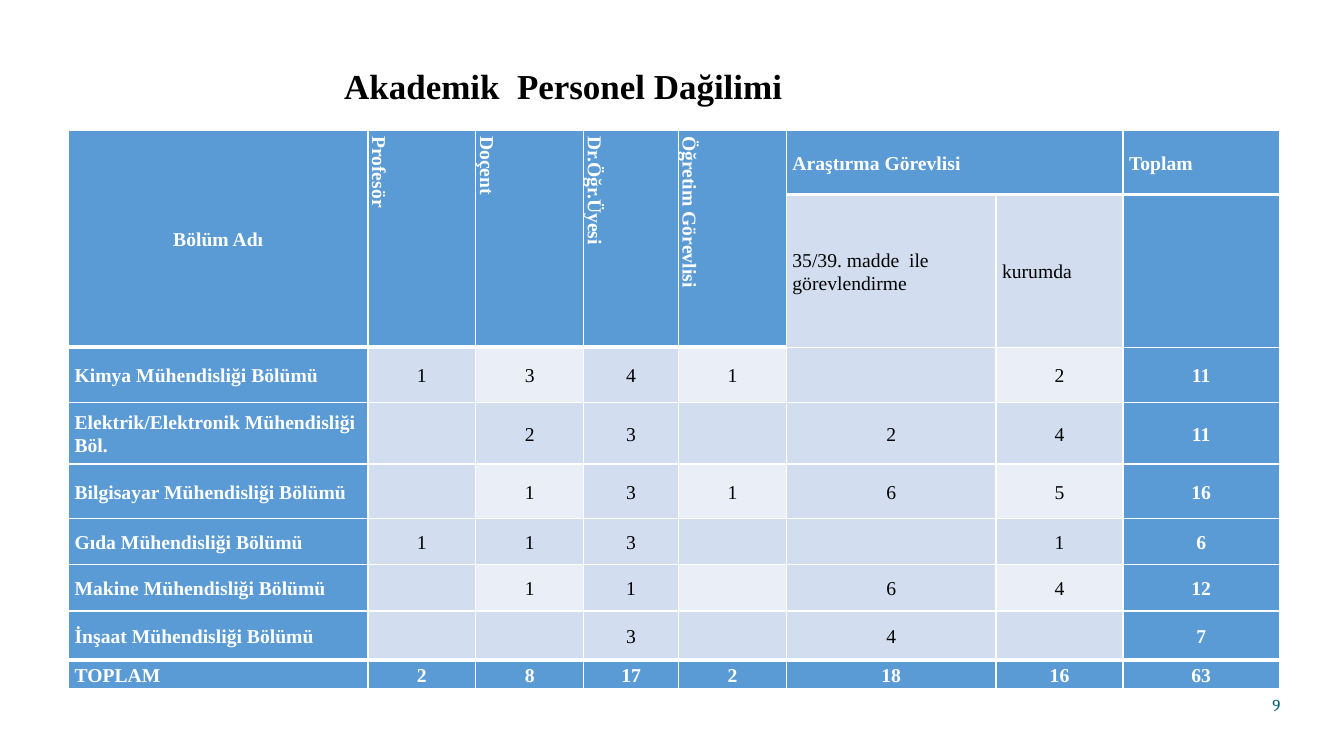
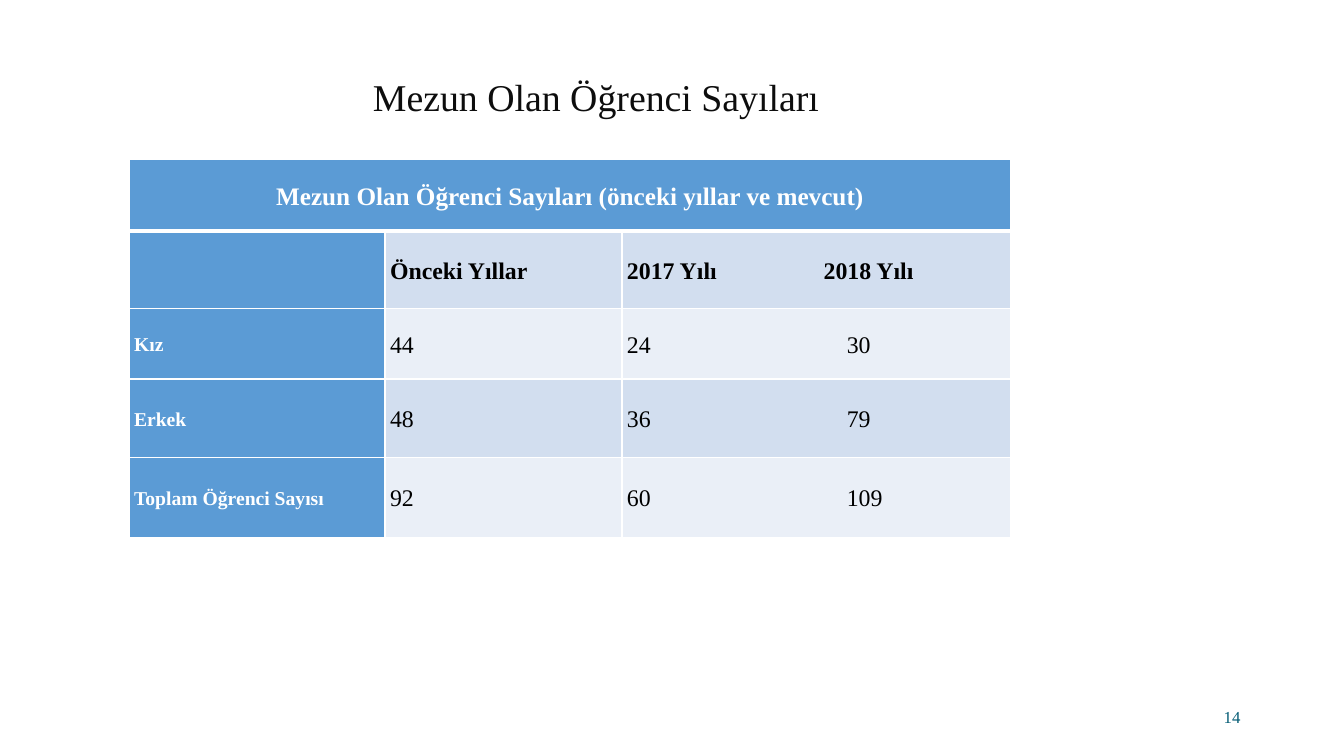
from pptx import Presentation
from pptx import util as u
from pptx.dml.color import RGBColor
from pptx.enum import text
from pptx.oxml import parse_xml
from pptx.oxml.ns import nsdecls

BLUE = RGBColor(0x5B, 0x9B, 0xD5)
BAND = RGBColor(0xD2, 0xDE, 0xEF)
PALE = RGBColor(0xEA, 0xEF, 0xF7)
WHITE = RGBColor(0xFF, 0xFF, 0xFF)
BLACK = RGBColor(0x00, 0x00, 0x00)
INK = RGBColor(0x0D, 0x0D, 0x0D)
TEAL = RGBColor(0x04, 0x5C, 0x75)
SERIF = "Times New Roman"
LEFT, CENTER, RIGHT = text.PP_ALIGN.LEFT, text.PP_ALIGN.CENTER, text.PP_ALIGN.RIGHT

deck = Presentation()
deck.slide_width, deck.slide_height = u.Inches(13.33), u.Inches(7.5)
# All lengths below are percentages of the slide's width and height
COL, ROW = deck.slide_width / 100, deck.slide_height / 100


def style(para, size, color, bold=False, align=LEFT, name=SERIF):
    para.alignment = align
    para.font.name, para.font.size = name, u.Pt(size)
    para.font.bold, para.font.color.rgb = bold, color


def paint(cell, fill, inset, top, bottom):
    """Fill a cell, set its margins and draw its white borders."""
    cell.margin_left = cell.margin_right = u.Inches(inset)
    cell.margin_top, cell.margin_bottom = u.Inches(0.01), 0
    cell.vertical_anchor = text.MSO_ANCHOR.MIDDLE
    props = cell._tc.get_or_add_tcPr()
    for side, points in (("L", 1), ("R", 1), ("T", top), ("B", bottom)):
        props.append(parse_xml(
            f'<a:ln{side} {nsdecls("a")} w="{u.Pt(points)}"><a:solidFill>'
            f'<a:srgbClr val="{WHITE}"/></a:solidFill></a:ln{side}>'))
    cell.fill.solid()
    cell.fill.fore_color.rgb = fill


# Contents: "" is an empty or merged cell
staff = [
    ["Bölüm Adı", "Profesör", "Doçent", "Dr.Öğr.Üyesi", "Öğretim Görevlisi",
     "Araştırma Görevlisi", "", "Toplam"],
    ["", "", "", "", "", "35/39. madde  ile görevlendirme", "kurumda", ""],
    ["Kimya Mühendisliği Bölümü", "1", "3", "4", "1", "", "2", "11"],
    ["Elektrik/Elektronik Mühendisliği Böl.", "", "2", "3", "", "2", "4", "11"],
    ["Bilgisayar Mühendisliği Bölümü", "", "1", "3", "1", "6", "5", "16"],
    ["Gıda Mühendisliği Bölümü", "1", "1", "3", "", "", "1", "6"],
    ["Makine Mühendisliği Bölümü", "", "1", "1", "", "6", "4", "12"],
    ["İnşaat Mühendisliği Bölümü", "", "", "3", "", "4", "", "7"],
    ["TOPLAM", "2", "8", "17", "2", "18", "16", "63"],
]
graduates = [
    ["Mezun Olan Öğrenci Sayıları (önceki yıllar ve mevcut)", "", ""],
    ["", "Önceki Yıllar", "2017 Yılı\t2018 Yılı"],
    ["Kız", "44", "24\t30"],
    ["Erkek", "48", "36\t79"],
    ["Toplam Öğrenci Sayısı", "92", "60\t109"],
]

# Per slide: title, page number, table place and grid
# "thick" holds the cells with a heavy top border
slides = [
    dict(title="Akademik  Personel Dağilimi", title_at=(18.5, 7.6, 46.8, 7.4),
         title_font=(25, BLACK, True),
         number="9", number_at=(89.78, 90.53), number_font="Cambria",
         rows=staff, at=(5.1, 17.2), inset=0.06,
         widths=[22.28, 8.03, 8.03, 7.05, 8.03, 15.6, 9.45, 11.63],
         heights=[8.53, 20.13, 7.33, 8.13, 7.2, 6.13, 6.13, 6.53, 3.73],
         merges=[((0, c), (1, c)) for c in range(5)] + [((0, 5), (0, 6))],
         thick={(2 if c < 5 else 1, c) for c in range(8)} | {(8, c) for c in range(8)}),
    dict(title="Mezun Olan Öğrenci Sayıları", title_at=(15.5, 10.53, 57.7, 4.53),
         title_font=(27, INK, False),
         number="14", number_at=(86.8, 92.13), number_font=SERIF,
         rows=graduates, at=(9.6, 21.07), inset=0.05,
         widths=[19.05, 17.63, 28.95], heights=[9.47, 10.27, 9.33, 10.4, 10.53],
         merges=[((0, 0), (0, 2))], thick={(1, c) for c in range(3)}),
]

for spec_ in slides:
    page = deck.slides.add_slide(deck.slide_layouts[6])
    rows, thick = spec_["rows"], spec_["thick"]
    is_staff = rows is staff

    # Title and page number
    size, color, bold = spec_["title_font"]
    for words, place, look in (
            (spec_["title"], spec_["title_at"], (size, color, bold, CENTER)),
            (spec_["number"], spec_["number_at"] + (6.23, 5.33),
             (12, TEAL, False, RIGHT, spec_["number_font"]))):
        left, top, width, height = place
        box = page.shapes.add_textbox(int(left * COL), int(top * ROW),
                                      int(width * COL), int(height * ROW))
        box.text_frame.word_wrap = True
        box.text_frame.vertical_anchor = text.MSO_ANCHOR.MIDDLE
        para = box.text_frame.paragraphs[0]
        para.text = words
        style(para, *look)

    # Table grid
    widths, heights = spec_["widths"], spec_["heights"]
    table = page.shapes.add_table(
        len(rows), len(widths), int(spec_["at"][0] * COL), int(spec_["at"][1] * ROW),
        int(sum(widths) * COL), int(sum(heights) * ROW)).table
    table.first_row = table.horz_banding = False
    for column, width in zip(table.columns, widths):
        column.width = int(width * COL)
    for line, height in zip(table.rows, heights):
        line.height = int(height * ROW)
    for first, last in spec_["merges"]:
        table.cell(*first).merge(table.cell(*last))

    # Table cells
    for r, row in enumerate(rows):
        for c, words in enumerate(row):
            cell = table.cell(r, c)
            if is_staff:
                header = r in (0, 8) or c in (0, 7) or (r == 1 and c < 5)
                pale = r > 1 and r % 2 == 0 and c % 2 == 0
                centered = (r, c) == (0, 0) or (r > 1 and c > 0)
                size, bold = 14, header
            else:
                header = r == 0 or c == 0
                pale = r % 2 == 0
                centered = r == 0
                size = 18 if r == 0 else 14 if c == 0 else 17
                bold = header or r == 1
            paint(cell, BLUE if header else PALE if pale else BAND, spec_["inset"],
                  3 if (r, c) in thick else 1,
                  3 if (r + cell.span_height, c) in thick else 1)
            if is_staff and r == 0 and 0 < c < 5:
                cell._tc.tcPr.set("vert", "vert")
            if not words:
                continue
            para = cell.text_frame.paragraphs[0]
            para.text = words
            para.line_spacing = 1.07
            if "\t" in words:
                stop = u.Inches(1.95 if r == 1 else 2.18)
                para._p.get_or_add_pPr().append(parse_xml(
                    f'<a:tabLst {nsdecls("a")}><a:tab pos="{stop}" algn="l"/></a:tabLst>'))
            style(para, size, WHITE if header else BLACK, bold,
                  CENTER if centered else LEFT)

deck.save("out.pptx")
